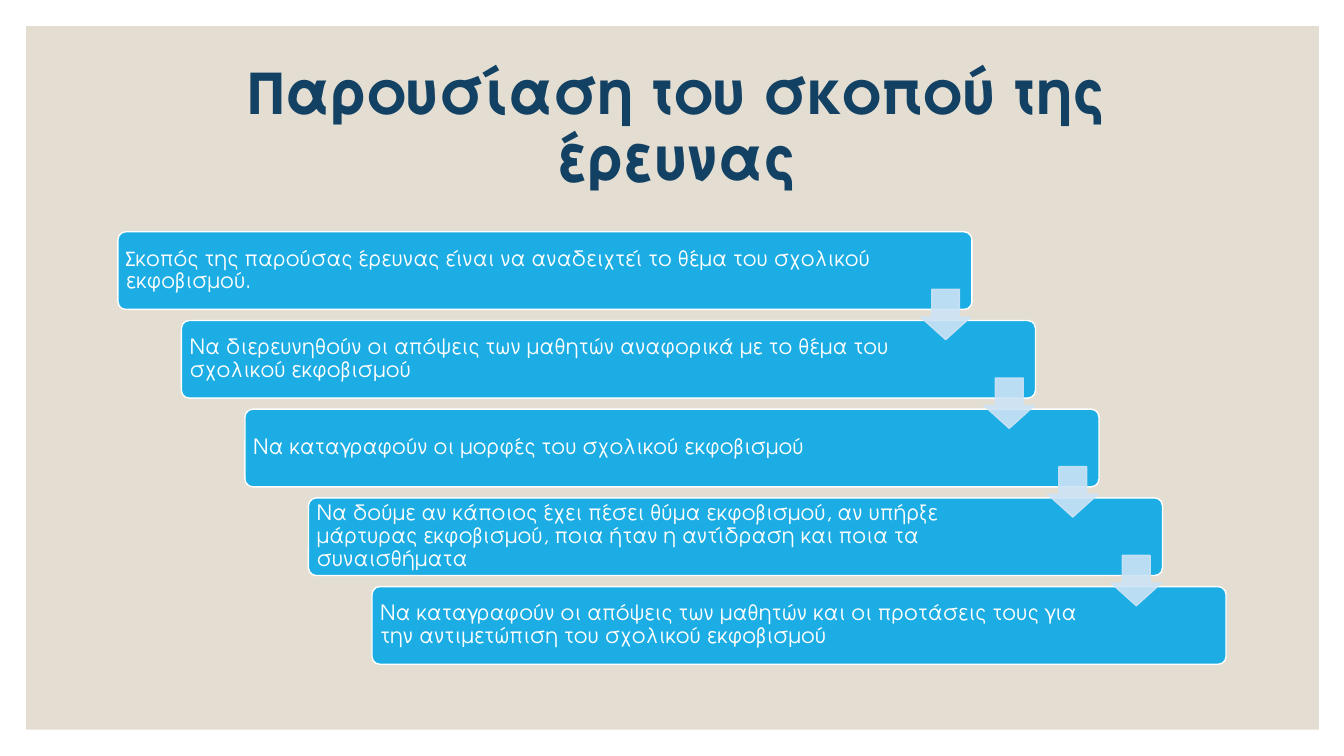
"""Builds the slide that presents the research aims as a descending staircase."""
from lxml import etree
from pptx import Presentation
from pptx.dml.color import RGBColor
from pptx.enum.shapes import MSO_SHAPE
from pptx.enum.text import MSO_ANCHOR, MSO_AUTO_SIZE, PP_ALIGN
from pptx.oxml.ns import qn
from pptx.util import Pt

PX = 9144
FONT = "TeX Gyre Adventor"
SAND = RGBColor(0xE3, 0xDE, 0xD1)
NAVY = RGBColor(0x13, 0x41, 0x63)
BLUE = RGBColor(0x1C, 0xAD, 0xE4)
PALE_BLUE = RGBColor(0xCD, 0xE3, 0xF5)
WHITE = RGBColor(0xFF, 0xFF, 0xFF)
RECTANGLE = MSO_SHAPE.RECTANGLE
ROUNDED = MSO_SHAPE.ROUNDED_RECTANGLE
DOWN_ARROW = MSO_SHAPE.DOWN_ARROW
MIDDLE = MSO_ANCHOR.MIDDLE
NO_AUTOFIT = MSO_AUTO_SIZE.NONE
LEFT, CENTER = PP_ALIGN.LEFT, PP_ALIGN.CENTER

TITLE = "Παρουσίαση του σκοπού της έρευνας"
AIMS = [
    "Σκοπός της παρούσας έρευνας είναι να αναδειχτεί το θέμα του σχολικού εκφοβισμού.",
    "Να διερευνηθούν οι απόψεις των μαθητών αναφορικά με το θέμα του σχολικού εκφοβισμού",
    "Να καταγραφούν οι μορφές του σχολικού εκφοβισμού",
    "Να δούμε αν κάποιος έχει πέσει θύμα εκφοβισμού, αν υπήρξε μάρτυρας εκφοβισμού, "
    "ποια ήταν η αντίδραση και ποια τα συναισθήματα",
    "Να καταγραφούν οι απόψεις των μαθητών και οι προτάσεις τους για την αντιμετώπιση "
    "του σχολικού εκφοβισμού",
]
STEP_X, STEP_Y = 63, 88
BAR_LEFT, BAR_TOP, BAR_WIDTH, BAR_HEIGHT = 117, 230, 847, 77
ARROW_LEFT, ARROW_TOP, ARROW_SIZE = 913, 287, 50


def write(shape, text, *, size, color, bold=False, align=LEFT, margin_x=6, margin_y=6):
    frame = shape.text_frame
    frame.word_wrap = True
    frame.auto_size = NO_AUTOFIT
    frame.vertical_anchor = MIDDLE
    frame.margin_left = frame.margin_right = margin_x * PX
    frame.margin_top = frame.margin_bottom = margin_y * PX
    paragraph = frame.paragraphs[0]
    paragraph.alignment = align
    paragraph.line_spacing = 0.9
    run = paragraph.add_run()
    run.text = text
    run.font.name = FONT
    run.font.size = Pt(size)
    run.font.bold = bold
    run.font.color.rgb = color


def add_figure(kind, box, fill, line=None, adjustments=()):
    shape = slide.shapes.add_shape(kind, *[length * PX for length in box])
    shape.shadow.inherit = False
    shape.fill.solid()
    shape.fill.fore_color.rgb = fill
    if line is None:
        shape.line.fill.background()
    else:
        shape.line.color.rgb = line
        shape.line.width = Pt(1)
    for index, value in enumerate(adjustments):
        shape.adjustments[index] = value
    return shape


presentation = Presentation()
presentation.slide_width = 1333 * PX
presentation.slide_height = 750 * PX
slide = presentation.slides.add_slide(presentation.slide_layouts[5])
slide.background.fill.solid()
slide.background.fill.fore_color.rgb = WHITE

panel = add_figure(RECTANGLE, (26, 26, 1282, 698), SAND)
title = slide.shapes.title
title.left, title.top, title.width, title.height = 121 * PX, 52 * PX, 1100 * PX, 150 * PX
write(title, TITLE, size=43.2, color=NAVY, bold=True, align=CENTER, margin_x=10, margin_y=5)
title._element.addprevious(panel._element)

for step, aim in enumerate(AIMS):
    left, top = BAR_LEFT + step * STEP_X, BAR_TOP + step * STEP_Y
    add_figure(ROUNDED, (left, top, BAR_WIDTH, BAR_HEIGHT), BLUE, WHITE, [0.1])
    text_width = 754 if step == 0 else 729
    label = slide.shapes.add_textbox(
        (left + 2) * PX, (top + 2) * PX, text_width * PX, (BAR_HEIGHT - 4) * PX
    )
    write(label, aim, size=15, color=WHITE)

for step in range(len(AIMS) - 1):
    box = (ARROW_LEFT + step * STEP_X, ARROW_TOP + step * STEP_Y, ARROW_SIZE, ARROW_SIZE)
    arrow = add_figure(DOWN_ARROW, box, PALE_BLUE, PALE_BLUE)
    arrow.adjustments[0] = 0.55
    arrow.adjustments[1] = 0.45
    for color in arrow._element.spPr.findall(".//" + qn("a:srgbClr")):
        etree.SubElement(color, qn("a:alpha")).set("val", "90000")

presentation.save("out.pptx")
